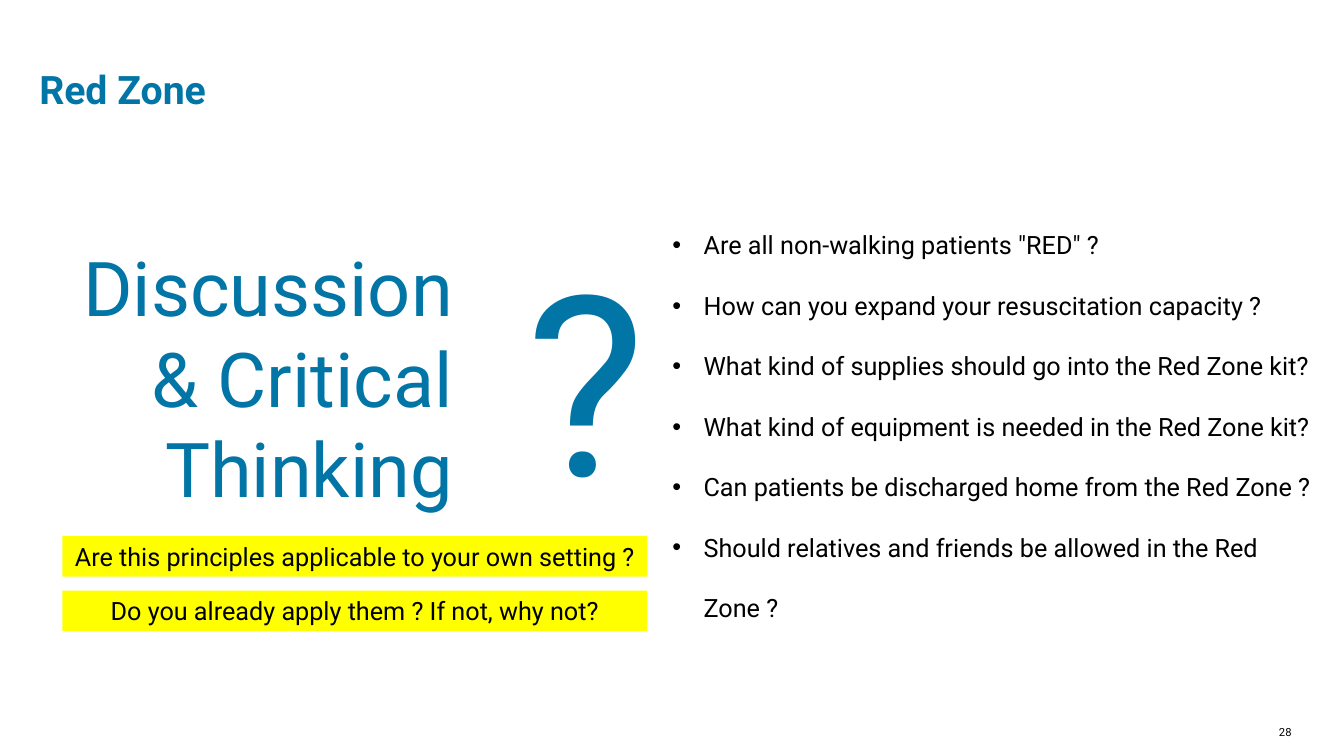
from dataclasses import dataclass

from lxml.etree import SubElement
from pptx import Presentation
from pptx.dml.color import RGBColor
from pptx.enum.shapes import MSO_SHAPE
from pptx.enum.text import MSO_ANCHOR, PP_ALIGN
from pptx.oxml.ns import qn
from pptx.util import Pt

PX = 9144  # EMU per px, 100 px to the inch


@dataclass(frozen=True)
class Theme:
    font: str = "Roboto"
    blue: RGBColor = RGBColor(0x00, 0x75, 0xA6)
    black: RGBColor = RGBColor(0x00, 0x00, 0x00)
    yellow: RGBColor = RGBColor(0xFF, 0xFF, 0x00)
    number_size: int = 8
    body_size: int = 18
    title_size: int = 28
    headline_size: int = 54
    mark_size: int = 180


THEME = Theme()

QUESTIONS = (
    'Are all non-walking patients "RED" ?',
    "How can you expand your resuscitation capacity ?",
    "What kind of supplies should go into the Red Zone kit?",
    "What kind of equipment is needed in the Red Zone kit?",
    "Can patients be discharged home from the Red Zone ?",
    "Should relatives and friends be allowed in the Red Zone ?",
)
PROMPTS = (
    "Are this principles applicable to your own setting ?",
    "Do you already apply them ? If not, why not?",
)


def set_values(target, values):
    for name, value in values.items():
        setattr(target, name, value)


def to_emu(box):
    return [length * PX for length in box]


def add_bullet(paragraph, indent):
    properties = paragraph._p.get_or_add_pPr()
    properties.set("marL", str(indent * PX))
    properties.set("indent", str(-indent * PX))
    SubElement(properties, qn("a:buFont"), typeface="Arial")
    SubElement(properties, qn("a:buChar"), char="•")


def write_lines(shape, lines, size, color, bold=False, align=PP_ALIGN.LEFT,
                spacing=None, indent=0, margins=(10, 5, 10, 5), anchor=MSO_ANCHOR.TOP):
    frame = shape.text_frame
    sides = ("margin_left", "margin_top", "margin_right", "margin_bottom")
    set_values(frame, {"word_wrap": True, "vertical_anchor": anchor,
                       **dict(zip(sides, to_emu(margins)))})
    for index, line in enumerate(lines):
        paragraph = frame.add_paragraph() if index else frame.paragraphs[0]
        if indent:
            add_bullet(paragraph, indent)
        set_values(paragraph, {"alignment": align, "line_spacing": spacing})
        run = paragraph.add_run()
        run.text = line
        set_values(run.font, {"name": THEME.font, "size": Pt(size), "bold": bold})
        run.font.color.rgb = color


def add_text(slide, box, lines, size, color, **layout):
    write_lines(slide.shapes.add_textbox(*to_emu(box)), lines, size, color, **layout)


def add_prompt(slide, box, text):
    shape = slide.shapes.add_shape(MSO_SHAPE.RECTANGLE, *to_emu(box))
    shape.shadow.inherit = False
    shape.fill.solid()
    shape.fill.fore_color.rgb = THEME.yellow
    shape.line.fill.background()
    write_lines(shape, [text], THEME.body_size, THEME.black, align=PP_ALIGN.CENTER)


def main():
    presentation = Presentation()
    set_values(presentation, {"slide_width": 1333 * PX, "slide_height": 750 * PX})
    slide = presentation.slides.add_slide(presentation.slide_layouts[6])

    # Slide number and title
    add_text(slide, (1249, 720, 32, 20), ["28"], THEME.number_size, THEME.black,
             align=PP_ALIGN.RIGHT, margins=(0, 0, 0, 0))
    add_text(slide, (37, 33, 1006, 79), ["Red Zone"], THEME.title_size, THEME.blue,
             bold=True, spacing=0.9, margins=(2, 0, 39, 0), anchor=MSO_ANCHOR.BOTTOM)

    # Headline with its question mark
    add_text(slide, (512, 218, 130, 313), ["?"], THEME.mark_size, THEME.blue,
             align=PP_ALIGN.CENTER)
    add_text(slide, (58, 234, 401, 283), ["Discussion & Critical Thinking"],
             THEME.headline_size, THEME.blue, align=PP_ALIGN.RIGHT)

    # Discussion questions
    add_text(slide, (657, 193, 662, 425), QUESTIONS, THEME.body_size, THEME.black,
             spacing=2.0, indent=31)

    # Highlighted prompts
    for row, prompt in enumerate(PROMPTS):
        add_prompt(slide, (62, 532 + 54 * row, 580, 40), prompt)

    presentation.save("out.pptx")


if __name__ == "__main__":
    main()
